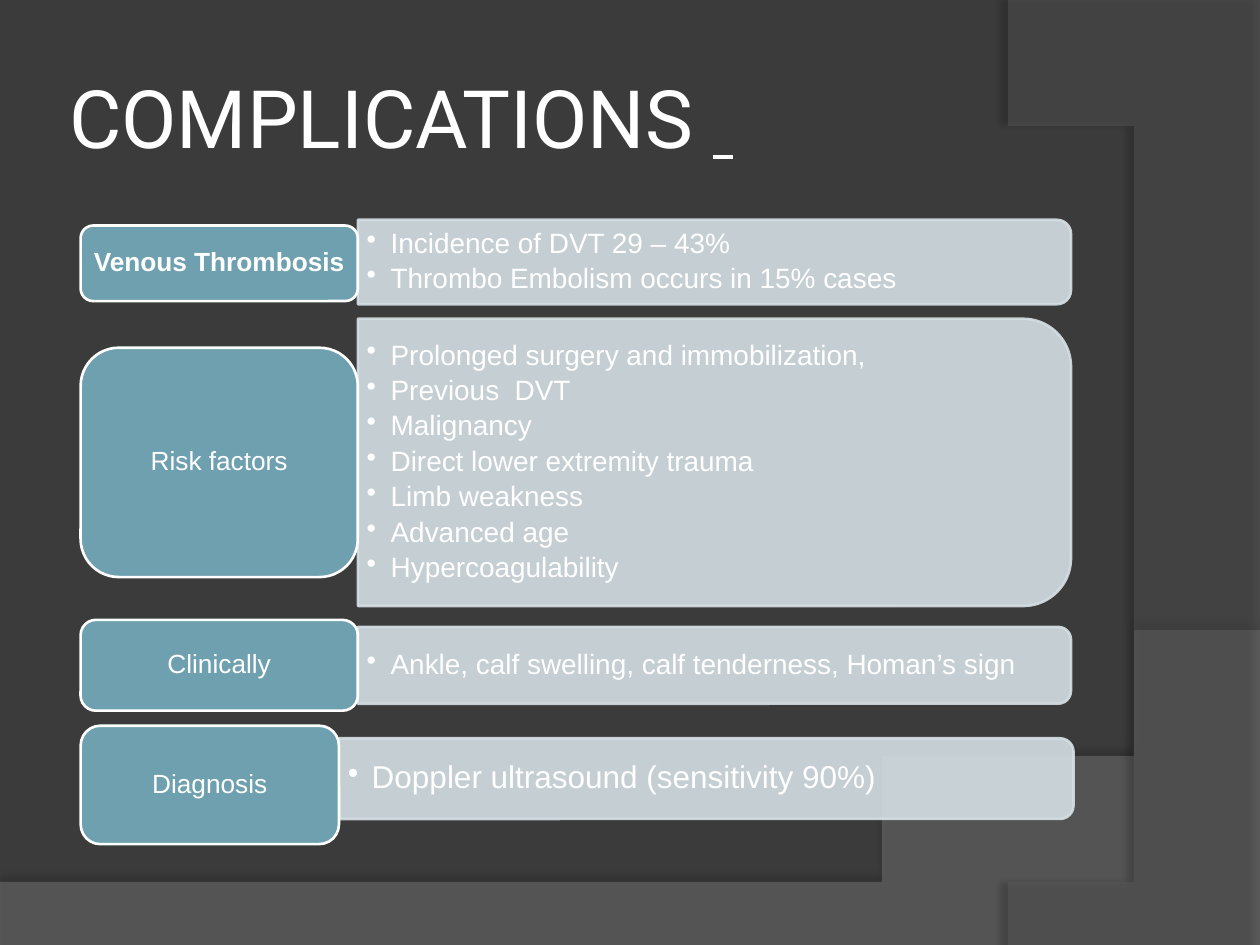
from lxml import etree
from pptx import Presentation
from pptx.dml.color import RGBColor
from pptx.enum.shapes import MSO_SHAPE
from pptx.enum.text import MSO_ANCHOR, PP_ALIGN
from pptx.oxml.ns import qn
from pptx.util import Inches, Pt

WIDE, HIGH = 10, 7.5
LEFT = 0.64     # left edge of the label column
INSET = 0.05    # room for a panel's round corners, per unit of height
STEPS = 48      # points along each curve
ROUND, HALF = MSO_SHAPE.ROUNDED_RECTANGLE, MSO_SHAPE.ROUND_2_SAME_RECTANGLE
MID = MSO_ANCHOR.MIDDLE
MIDDLE, START = PP_ALIGN.CENTER, PP_ALIGN.LEFT
COLORS = {"back": "3B3B3B", "wave": "7F7F7F", "arc": "5E5E5E",
          "panel": "D5DFE4", "label": "6EA0B0", "text": "FFFFFF"}

# Label, bold, (middle, width, height); panel (middle, width, height); size; bullets
ROWS = [
    ("Venous Thrombosis", True, (2.09, 2.2, 0.6), (2.08, 5.66, 0.67), 16,
     ["Incidence of DVT 29 – 43%", "Thrombo Embolism occurs in 15% cases"]),
    ("Risk factors", False, (3.67, 2.2, 1.82), (3.67, 5.66, 2.28), 16,
     ["Prolonged surgery and immobilization,", "Previous  DVT", "Malignancy",
      "Direct lower extremity trauma", "Limb weakness", "Advanced age",
      "Hypercoagulability"]),
    ("Clinically", False, (5.28, 2.2, 0.72), (5.28, 5.66, 0.61), 16,
     ["Ankle, calf swelling, calf tenderness, Homan’s sign"]),
    ("Diagnosis", False, (6.23, 2.05, 0.94), (6.18, 5.83, 0.64), 18,
     ["Doppler ultrasound (sensitivity 90%)"]),
]


def color(name):
    return RGBColor.from_string(COLORS[name])


def fade(shape, share):
    """Make every solid colour of a shape partly opaque."""
    for tone in shape._element.spPr.iter(qn("a:srgbClr")):
        etree.SubElement(tone, qn("a:alpha"), val=str(share * 1000))


def paint(shape, fill, line=None):
    shape.shadow.inherit = False
    shape.fill.solid()
    shape.fill.fore_color.rgb = color(fill)
    if line:
        shape.line.color.rgb = color(line)
        shape.line.width = Pt(1.5)
    else:
        shape.line.fill.background()


def curve(a, b, c, d):
    """Points along a cubic curve from a to d."""
    spots = []
    for i in range(STEPS + 1):
        t = i / STEPS
        u = 1 - t
        spots.append(tuple(u**3 * p + 3 * u * u * t * q + 3 * u * t * t * r + t**3 * s
                           for p, q, r, s in zip(a, b, c, d)))
    return spots


def add_swoosh(slide, spots, fill, share, shade, dist, turn):
    pen = slide.shapes.build_freeform(*spots[0], scale=Inches(1))
    pen.add_line_segments(spots[1:], close=True)
    shape = pen.convert_to_shape()
    paint(shape, fill)
    fade(shape, share)
    # Soft shadow along the curved edge
    effects = shape._element.spPr.find(qn("a:effectLst"))
    cast = etree.SubElement(effects, qn("a:outerShdw"), blurRad=str(Pt(4)),
                            dist=str(Pt(dist)), dir=str(turn * 60000),
                            algn="ctr", rotWithShape="0")
    tone = etree.SubElement(cast, qn("a:srgbClr"), val="000000")
    etree.SubElement(tone, qn("a:alpha"), val=str(shade * 1000))


def set_frame(frame, side, edge):
    frame.word_wrap = True
    frame.vertical_anchor = MID
    frame.margin_left = frame.margin_right = Inches(side)
    frame.margin_top = frame.margin_bottom = Inches(edge)


def add_run(para, text, size, face="Arial", bold=False):
    run = para.add_run()
    run.text = text
    run.font.size, run.font.name, run.font.bold = Pt(size), face, bold
    run.font.color.rgb = color("text")
    return run


def add_bullet(para, text, size):
    para.alignment, para.line_spacing, para.space_after = START, 0.9, Pt(3)
    props = para._p.get_or_add_pPr()
    props.set("marL", str(Inches(0.19)))
    props.set("indent", str(Inches(-0.19)))
    etree.SubElement(props, qn("a:buChar"), char="•")
    add_run(para, text, size)


def add_title(slide):
    title = slide.shapes.title
    title.left, title.top, title.width, title.height = map(Inches, (0.5, 0.3, 8.17, 1.25))
    set_frame(title.text_frame, 0.05, 0.05)
    para = title.text_frame.paragraphs[0]
    para.alignment = START
    add_run(para, "COMPLICATIONS ", 46, "Roboto")
    add_run(para, " ", 46, "Roboto").font.underline = True


def add_panel(slide, left, mid, wide, high, size, items):
    # A quarter turn puts the round corners on the right
    shape = slide.shapes.add_shape(HALF, Inches(left + (wide - high) / 2),
                                   Inches(mid - wide / 2), Inches(high), Inches(wide))
    shape.rotation = 90
    paint(shape, "panel", "panel")
    fade(shape, 90)
    # Upright text inside the round corners
    pad = INSET * high
    box = slide.shapes.add_textbox(Inches(left), Inches(mid - high / 2 + pad),
                                   Inches(wide - pad), Inches(high - 2 * pad))
    frame = box.text_frame
    set_frame(frame, 0.07, 0.03)
    for i, item in enumerate(items):
        add_bullet(frame.add_paragraph() if i else frame.paragraphs[0], item, size)


def add_label(slide, text, bold, mid, wide, high):
    shape = slide.shapes.add_shape(ROUND, Inches(LEFT), Inches(mid - high / 2),
                                   Inches(wide), Inches(high))
    paint(shape, "label", "text")
    set_frame(shape.text_frame, 0.06, 0.03)
    para = shape.text_frame.paragraphs[0]
    para.alignment, para.line_spacing = MIDDLE, 0.9
    add_run(para, text, 15, bold=bold)


def main():
    deck = Presentation()
    deck.slide_width, deck.slide_height = Inches(WIDE), Inches(HIGH)
    slide = deck.slides.add_slide(deck.slide_layouts[5])

    # Backdrop
    slide.background.fill.solid()
    slide.background.fill.fore_color.rgb = color("back")
    wave = curve((WIDE, 5.2), (5.59, 7.29), (3.91, 7.19), (0, 7.05))
    add_swoosh(slide, [(0, HIGH), (WIDE, HIGH)] + wave, "wave", 45, 35, 3.5, 270)
    arc = curve((8.21, HIGH), (9.35, 6.19), (10.18, 3), (8, 0))
    add_swoosh(slide, [(WIDE, 0.02), (WIDE, HIGH)] + arc, "arc", 40, 45, 4, 180)

    # Title, in front of the backdrop
    add_title(slide)
    slide.shapes._spTree.append(slide.shapes.title._element)

    # Rows of label and panel
    for text, bold, label, panel, size, items in ROWS:
        add_panel(slide, LEFT + label[1], *panel, size, items)
        add_label(slide, text, bold, *label)

    deck.save("out.pptx")


if __name__ == "__main__":
    main()
